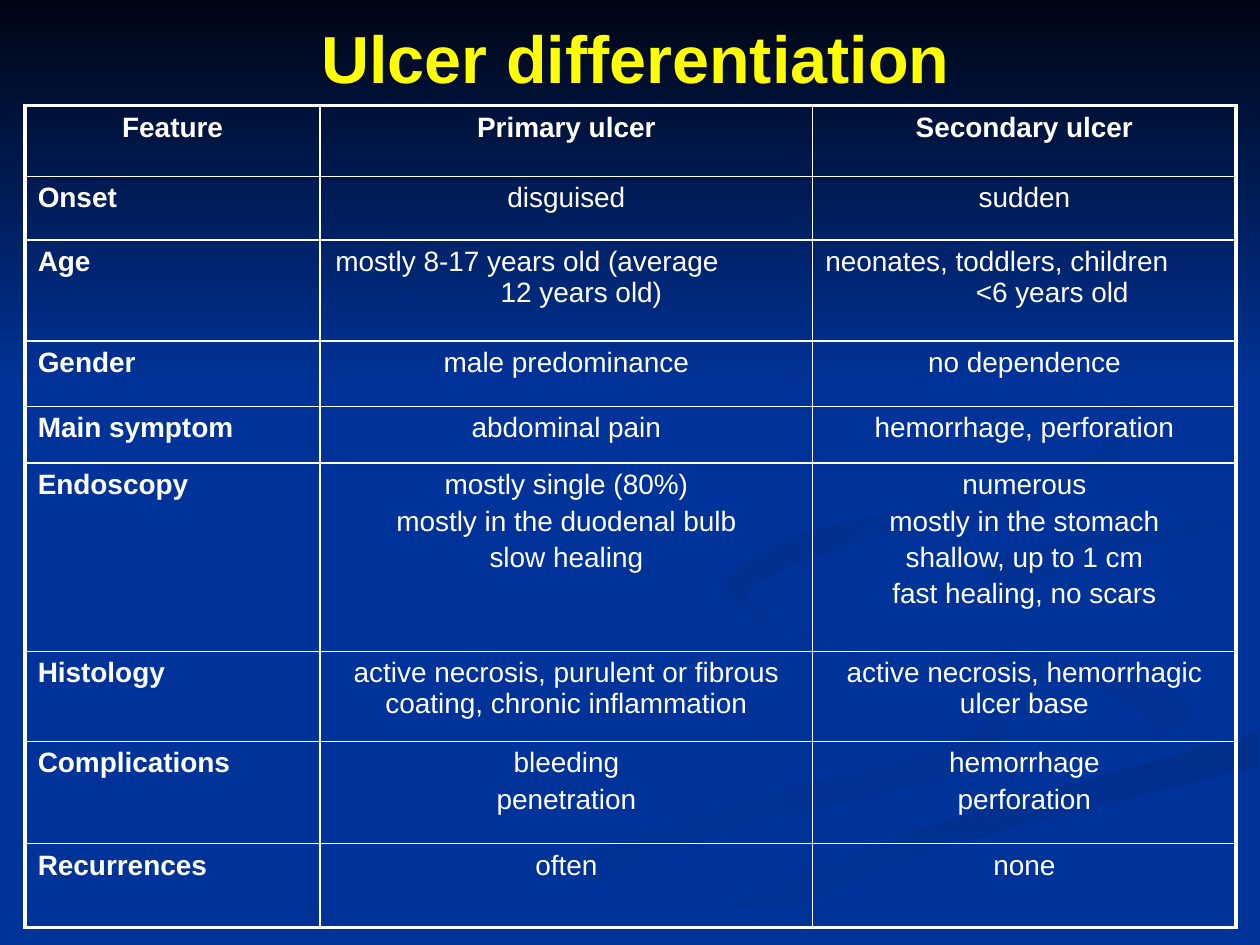
from lxml import etree
from pptx import Presentation
from pptx.dml.color import RGBColor
from pptx.enum.text import MSO_ANCHOR, PP_ALIGN
from pptx.oxml.ns import qn
from pptx.util import Pt

CENTER, LEFT = PP_ALIGN.CENTER, PP_ALIGN.LEFT
MIDDLE = MSO_ANCHOR.MIDDLE

THEME = {
    "font": "Arial", "title_size": 38, "body_size": 16,
    "title": "FFFF00", "text": "FFFFFF", "line": "FFFFFF",
    "back": "003399", "shade": "003193", "deep": "002F8C", "night": "000514",
    "outer_line": 2.25, "inner_line": 1, "para_gap": 3,
}

# Content: each cell is a list of paragraphs
TITLE = "Ulcer differentiation"
ROWS = [
    (["Feature"], ["Primary ulcer"], ["Secondary ulcer"]),
    (["Onset"], ["disguised"], ["sudden"]),
    (["Age"], ["mostly 8-17 years old (average", "12 years old)"],
     ["neonates, toddlers, children", "<6 years old"]),
    (["Gender"], ["male predominance"], ["no dependence"]),
    (["Main symptom"], ["abdominal pain"], ["hemorrhage, perforation"]),
    (["Endoscopy"],
     ["mostly single (80%)", "mostly in the duodenal bulb", "slow healing"],
     ["numerous", "mostly in the stomach", "shallow, up to 1 cm",
      "fast healing, no scars"]),
    (["Histology"],
     ["active necrosis, purulent or fibrous coating, chronic inflammation"],
     ["active necrosis, hemorrhagic ulcer base"]),
    (["Complications"], ["bleeding", "penetration"],
     ["hemorrhage", "perforation"]),
    (["Recurrences"], ["often"], ["none"]),
]
# Left indents of the staggered lines, by (row, column)
STAGGERED = {(2, 1): (1.5, 96), (2, 2): (0, 86)}

SLIDE_W, SLIDE_H = 720, 540
SKY_H = 222
TITLE_BOX = (14.5, 9.5, 697.5, 45.5)
TABLE_AT = (14.4, 60.3)
COL_WIDTHS = [168.5, 281.5, 242]
ROW_HEIGHTS = [40.5, 36.5, 57.5, 37.5, 32.5, 107.5, 51.5, 58.5, 48]

# Edges shared by neighbouring ribbons
BEND = [(521, 334), (536, 353), (585, 371), (662, 394), (679, 410)]
RISE = [(374, 538), (454, 499), (550, 466), (719, 418)]
HOOK = [(719, 289), (584, 315), (563, 335)]

# Ribbons, back to front: start colour, end colour, angle, smooth edges
RIBBONS = [
    ("back", "shade", 0, [
        [(414, 330), (412, 343), (454, 364), (541, 391), (566, 408),
         (523, 433), (388, 467), (216, 539)],
        [(260, 539), (406, 479), (544, 442), (576, 418), (545, 391),
         (462, 365), (414, 330)]]),
    ("back", "shade", 45, [
        BEND + [(644, 436)],
        [(644, 436), (661, 418), (625, 392), (552, 369), (521, 334)]]),
    ("deep", "back", 90, [RISE, [(719, 438), (541, 484), (411, 539)]]),
    ("back", "back", 0, [
        BEND + [(626, 440), (477, 481), (343, 539)], RISE,
        [(719, 387), (611, 362)] + HOOK[::-1],
        [(719, 279), (567, 304), (521, 334)]]),
    ("shade", "back", 45, [
        HOOK + [(595, 357)],
        [(595, 357), (580, 340), (632, 316), (719, 302)]]),
    ("deep", "back", 45, [
        [(549, 168), (622, 210), (644, 248), (594, 289), (492, 310),
         (427, 338), (448, 360)],
        [(448, 360), (415, 333), (467, 302), (589, 278), (639, 241),
         (609, 201), (549, 168)]]),
    ("night", "back", 90,
     [[(0, 0), (0, SKY_H)], [(SLIDE_W, SKY_H), (SLIDE_W, 0)]]),
]
STEPS = 6  # line segments between two points of a smooth edge


def rgb(name):
    return RGBColor.from_string(THEME[name])


def smooth_edge(points):
    """Catmull-Rom curve through the points."""
    padded = points[:1] + points + points[-1:]
    curve = []
    for a, b, c, d in zip(padded, padded[1:], padded[2:], padded[3:]):
        for step in range(STEPS):
            t = step / STEPS
            curve.append(tuple(
                q + t / 2 * (r - p + t * (2 * p - 5 * q + 4 * r - u
                                          + t * (3 * (q - r) + u - p)))
                for p, q, r, u in zip(a, b, c, d)))
    return curve + points[-1:]


def add_ribbon(s, start, end, angle, edges):
    outline = [(Pt(x), Pt(y)) for edge in edges for x, y in smooth_edge(edge)]
    builder = s.shapes.build_freeform(*outline[0])
    builder.add_line_segments(outline[1:], close=True)
    sp = builder.convert_to_shape()
    sp.shadow.inherit = False
    sp.line.fill.background()
    if start == end:
        sp.fill.solid()
        sp.fill.fore_color.rgb = rgb(start)
        return
    sp.fill.gradient()
    sp.fill.gradient_angle = -angle % 360  # counter-clockwise
    for stop, color, position in zip(sp.fill.gradient_stops, (start, end), (0, 1)):
        stop.color.rgb = rgb(color)
        stop.position = position


def style_runs(p, size, color, bold):
    for r in p.runs:
        r.font.name = THEME["font"]
        r.font.size = Pt(THEME[size])
        r.font.color.rgb = rgb(color)
        r.font.bold = bold


def set_borders(cell, widths):
    tc_pr = cell._tc.get_or_add_tcPr()
    for i, (side, width) in enumerate(widths.items()):
        ln = etree.Element(qn("a:" + side), w=str(Pt(width)))
        fill = etree.SubElement(ln, qn("a:solidFill"))
        etree.SubElement(fill, qn("a:srgbClr"), val=THEME["line"])
        tc_pr.insert(i, ln)


def fill_cell(cell, lines, row, col):
    cell.text_frame.text = "\n".join(lines)
    indents = STAGGERED.get((row, col))
    for i, p in enumerate(cell.text_frame.paragraphs):
        p.alignment = LEFT if indents or (col == 0 and row > 0) else CENTER
        p.space_before = Pt(0 if indents and i else THEME["para_gap"])
        if indents:
            p._p.get_or_add_pPr().set("marL", str(Pt(indents[i])))
        style_runs(p, "body_size", "text", row == 0 or col == 0)


prs = Presentation()
prs.slide_width, prs.slide_height = Pt(SLIDE_W), Pt(SLIDE_H)
s = prs.slides.add_slide(prs.slide_layouts[5])

# Background
s.background.fill.solid()
s.background.fill.fore_color.rgb = rgb("back")
for ribbon in RIBBONS:
    add_ribbon(s, *ribbon)

# Table
last_row, last_col = len(ROWS) - 1, len(COL_WIDTHS) - 1
size = (sum(COL_WIDTHS), sum(ROW_HEIGHTS))
table = s.shapes.add_table(len(ROWS), len(COL_WIDTHS),
                           *map(Pt, TABLE_AT + size)).table
table.first_row = table.horz_banding = False
for column, width in zip(table.columns, COL_WIDTHS):
    column.width = Pt(width)
for i, (row, height) in enumerate(zip(table.rows, ROW_HEIGHTS)):
    row.height = Pt(height)
    for j, cell in enumerate(row.cells):
        fill_cell(cell, ROWS[i][j], i, j)
        cell.fill.background()
        edges = {"lnL": j == 0, "lnR": j == last_col,
                 "lnT": i == 0, "lnB": i == last_row}
        set_borders(cell, {side: THEME["outer_line" if outer else "inner_line"]
                           for side, outer in edges.items()})

# Title, brought in front of the background
title = s.shapes.title
s.shapes._spTree.append(title._element)
title.left, title.top, title.width, title.height = map(Pt, TITLE_BOX)
tf = title.text_frame
tf.text = TITLE
tf.vertical_anchor = MIDDLE
tf.paragraphs[0].alignment = CENTER
style_runs(tf.paragraphs[0], "title_size", "title", True)

prs.save("out.pptx")
